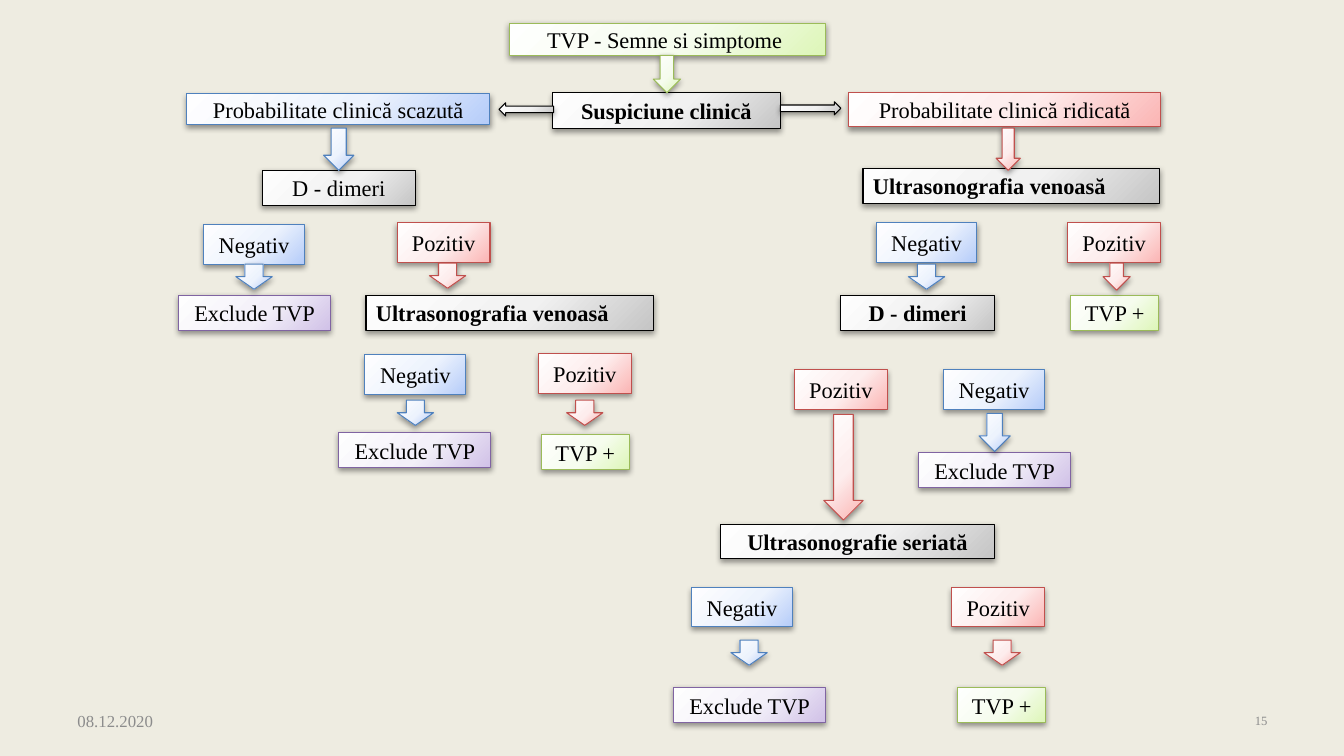
from pptx import Presentation
from pptx.dml.color import RGBColor
from pptx.enum.shapes import MSO_SHAPE as Shape
from pptx.enum.text import MSO_ANCHOR as Anchor, PP_ALIGN as Align
from pptx.oxml import parse_xml
from pptx.oxml.ns import nsdecls
from pptx.util import Cm, Pt

# Palettes: three gradient stops and the outline
PALETTES = {
    "green": ("FEFFFE", "F6FCEE", "DDF6B8", "9BBB59"),
    "grey": ("FEFEFE", "F1F1F1", "C5C5C5", "000000"),
    "blue": ("FEFEFF", "EDF3FD", "B5CCF9", "4F81BD"),
    "red": ("FFFEFE", "FDEDED", "FBB5B4", "C0504D"),
    "purple": ("FEFEFE", "F3F0F9", "D0C1E7", "8064A2"),
}
STOPS = (0, 55, 100)


def color(value):
    return RGBColor.from_string(value)


def inches(value):
    return Cm(value * 2.54)


class FlowSlide:
    font_name = "Times New Roman"

    def __init__(self, deck):
        self.page = deck.slides.add_slide(deck.slide_layouts[6])

    def background(self, value):
        fill = self.page.background.fill
        fill.solid()
        fill.fore_color.rgb = color(value)

    def add_text(self, box, text, align=Align.CENTER, tint="000000", **formats):
        frame = box.text_frame
        frame.word_wrap = True
        frame.vertical_anchor = Anchor.MIDDLE
        para = frame.paragraphs[0]
        para.alignment = align
        span = para.add_run()
        span.text = text
        for name, value in {"name": self.font_name, "size": Pt(16), **formats}.items():
            setattr(span.font, name, value)
        span.font.color.rgb = color(tint)

    def label(self, place, text, size, align):
        box = self.page.shapes.add_textbox(*map(inches, place))
        self.add_text(box, text, align, "8C8C8C", size=Pt(size))

    def figure(self, preset, place, palette):
        *tints, outline = PALETTES[palette]
        shape = self.page.shapes.add_shape(preset, *map(inches, place))
        stops = "".join(
            f'<a:gs pos="{stop * 1000}"><a:srgbClr val="{tint}"/></a:gs>'
            for stop, tint in zip(STOPS, tints))
        properties = shape.element.spPr
        properties.append(parse_xml(
            f'<a:gradFill {nsdecls("a")} rotWithShape="1"><a:gsLst>{stops}</a:gsLst>'
            '<a:path path="circle"><a:fillToRect l="-40000" t="-90000" '
            'r="140000" b="190000"/></a:path></a:gradFill>'))
        shape.line.color.rgb = color(outline)
        shape.line.width = Pt(0.75)
        # Soft shadow below the shape
        shape.shadow.inherit = False
        properties[-1].append(parse_xml(
            f'<a:outerShdw {nsdecls("a")} blurRad="{Pt(4.1)}" dist="{Pt(2)}" '
            'dir="5400000" rotWithShape="0"><a:srgbClr val="000000">'
            '<a:alpha val="40000"/></a:srgbClr></a:outerShdw>'))
        return shape

    def box(self, place, palette, text, bold=False, align=Align.CENTER):
        shape = self.figure(Shape.RECTANGLE, place, palette)
        self.add_text(shape, text, align, bold=bold)

    def arrow(self, place, palette, preset=Shape.DOWN_ARROW, rotation=0):
        self.figure(preset, place, palette).rotation = rotation


def main():
    deck = Presentation()
    deck.slide_width, deck.slide_height = inches(13.33), inches(7.5)
    flow = FlowSlide(deck)
    flow.background("EEECE1")

    # Date and slide number
    flow.label((0.67, 6.95, 3.11, 0.4), "08.12.2020", 12, Align.LEFT)
    flow.label((9.56, 6.95, 3.11, 0.4), "15", 9, Align.RIGHT)

    # Symptoms, suspicion and the two probabilities
    flow.box((5.05, 0.23, 3.14, 0.32), "green", "TVP - Semne si simptome ")
    flow.box((5.48, 0.92, 2.26, 0.36), "grey", "Suspiciune clinică", True)
    flow.box((1.85, 0.93, 3.01, 0.31), "blue", "Probabilitate clinică scazută")
    flow.box((8.42, 0.92, 3.09, 0.34), "red", "Probabilitate clinică ridicată")

    # Investigations
    flow.box((2.6, 1.69, 1.52, 0.35), "grey", "D - dimeri")
    flow.box((8.34, 2.93, 1.52, 0.35), "grey", "D - dimeri", True)
    flow.box((7.15, 5.2, 2.71, 0.34), "grey", "Ultrasonografie seriată", True)
    for place in ((8.56, 1.67, 2.94, 0.35), (3.63, 2.93, 2.85, 0.35)):
        flow.box(place, "grey", "Ultrasonografia venoasă", True, Align.LEFT)

    # Results and outcomes: text, palette, size, top left corners
    results = (
        ("Negativ", "blue", (1, 0.39),
         ((2.02, 2.23), (3.62, 3.52), (8.69, 2.21), (9.36, 3.67), (6.86, 5.83))),
        ("Pozitiv", "red", (0.92, 0.39),
         ((3.94, 2.21), (10.59, 2.21), (5.34, 3.51), (7.88, 3.67), (9.44, 5.83))),
        ("Exclude TVP", "purple", (1.51, 0.35),
         ((1.77, 2.93), (9.11, 4.49), (3.36, 4.29), (6.68, 6.82))),
        ("TVP +", "green", (0.87, 0.35),
         ((10.62, 2.93), (5.37, 4.31), (9.5, 6.82))),
    )
    for text, palette, size, corners in results:
        for corner in corners:
            flow.box(corner + size, palette, text)

    # Short arrows of one size
    short_arrows = {
        "blue": ((2.34, 2.62), (9.01, 2.62), (3.94, 3.97), (7.25, 6.35)),
        "red": ((4.26, 2.61), (5.62, 3.97), (9.76, 6.35)),
    }
    for palette, corners in short_arrows.items():
        for corner in corners:
            flow.arrow(corner + (0.36, 0.25), palette)

    # Other arrows
    for place, palette in (
        ((6.48, 0.55, 0.27, 0.37), "green"),
        ((3.21, 1.27, 0.3, 0.42), "blue"),
        ((9.88, 1.27, 0.24, 0.42), "red"),
        ((10.94, 2.61, 0.27, 0.27), "red"),
        ((9.71, 4.1, 0.31, 0.38), "blue"),
        ((8.17, 4.11, 0.39, 1.05), "red"),
    ):
        flow.arrow(place, palette)
    flow.arrow((7.74, 1.01, 0.6, 0.13), "grey", Shape.RIGHT_ARROW)
    flow.arrow((4.95, 1.02, 0.54, 0.13), "grey", Shape.RIGHT_ARROW, 180)

    deck.save("out.pptx")


if __name__ == "__main__":
    main()
